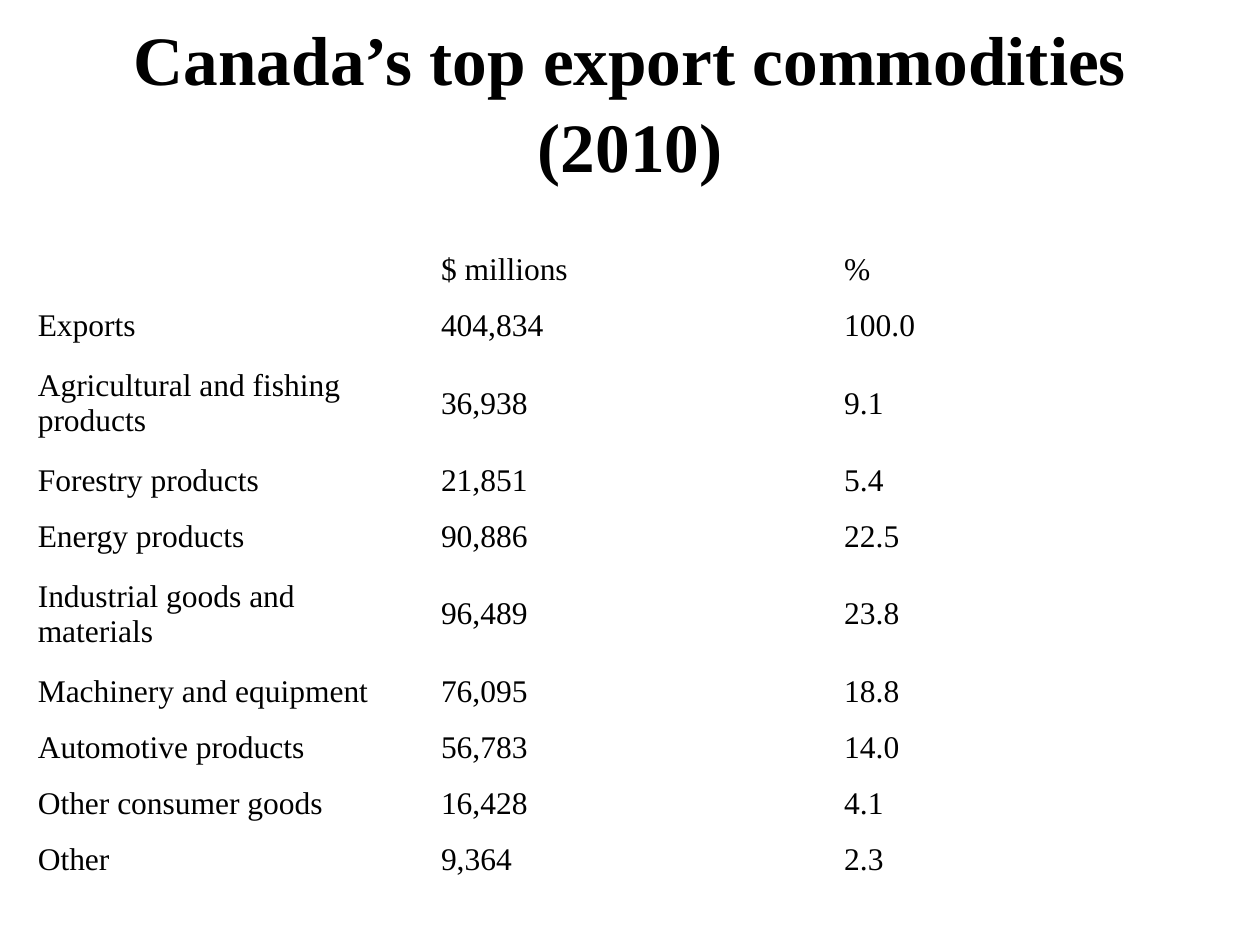
"""Build a slide with a table of Canada's top export commodities."""
from typing import NamedTuple

from pptx import Presentation
from pptx import util as u
from pptx.dml.color import RGBColor
from pptx.enum import text as t

FONT = "Times New Roman"
WIDE, HIGH = u.Inches(10), u.Inches(7.5)


class Box(NamedTuple):
    left: float
    top: float
    width: float
    height: float

    def place(self) -> list[int]:
        return [int(share * side) for share, side in zip(self, (WIDE, HIGH) * 2)]


class Row(NamedTuple):
    name: str
    value: str
    share: str
    units: int = 4


ROWS = [
    Row("", "$ millions", "%"),
    Row("Exports", "404,834", "100.0"),
    Row("Agricultural and fishing products", "36,938", "9.1", 7),
    Row("Forestry products", "21,851", "5.4"),
    Row("Energy products", "90,886", "22.5"),
    Row("Industrial goods and materials", "96,489", "23.8", 7),
    Row("Machinery and equipment", "76,095", "18.8"),
    Row("Automotive products", "56,783", "14.0"),
    Row("Other consumer goods", "16,428", "4.1"),
    Row("Other", "9,364", "2.3"),
]


def paint(code: str) -> RGBColor:
    return RGBColor.from_string(code)


def write(frame, words: str, size: float = 18, bold: bool = False,
          align=t.PP_ALIGN.LEFT, space: float = 1.0, color: str = "000000") -> None:
    line = frame.paragraphs[0]
    line.alignment = align
    line.line_spacing = space
    line.font.size = u.Pt(size)
    if words:
        run = line.add_run()
        run.text = words
        font = run.font
        font.name, font.size, font.bold = FONT, u.Pt(size), bold
        font.color.rgb = paint(color)


def head(slide, box: Box, words: str) -> None:
    title = slide.shapes.title
    title.left, title.top, title.width, title.height = box.place()
    frame = title.text_frame
    frame.word_wrap = True
    frame.auto_size = t.MSO_AUTO_SIZE.NONE
    frame.vertical_anchor = t.MSO_ANCHOR.MIDDLE
    write(frame, words, size=39.6, bold=True, align=t.PP_ALIGN.CENTER, space=1.05)


def grid(slide, box: Box, rows: list[Row]) -> None:
    place = box.place()
    table = slide.shapes.add_table(len(rows), 3, *place).table
    table.first_row = table.horz_banding = False
    unit = place[3] / sum(row.units for row in rows)
    for r, row in enumerate(rows):
        table.rows[r].height = int(row.units * unit)
        for c, words in enumerate((row.name, row.value, row.share)):
            cell = table.cell(r, c)
            cell.vertical_anchor = t.MSO_ANCHOR.MIDDLE
            if r:
                cell.fill.solid()
                cell.fill.fore_color.rgb = paint("FFFFFF")
            else:
                cell.fill.background()
            write(cell.text_frame, words)


def main() -> None:
    deck = Presentation()
    deck.slide_width, deck.slide_height = WIDE, HIGH
    slide = deck.slides.add_slide(deck.slide_layouts[5])
    head(slide, Box(0.05, 0.02, 0.9, 0.17), "Canada’s top export commodities (2010)")
    grid(slide, Box(0.02, 0.256, 0.96, 0.684), ROWS)
    deck.save("out.pptx")


if __name__ == "__main__":
    main()
